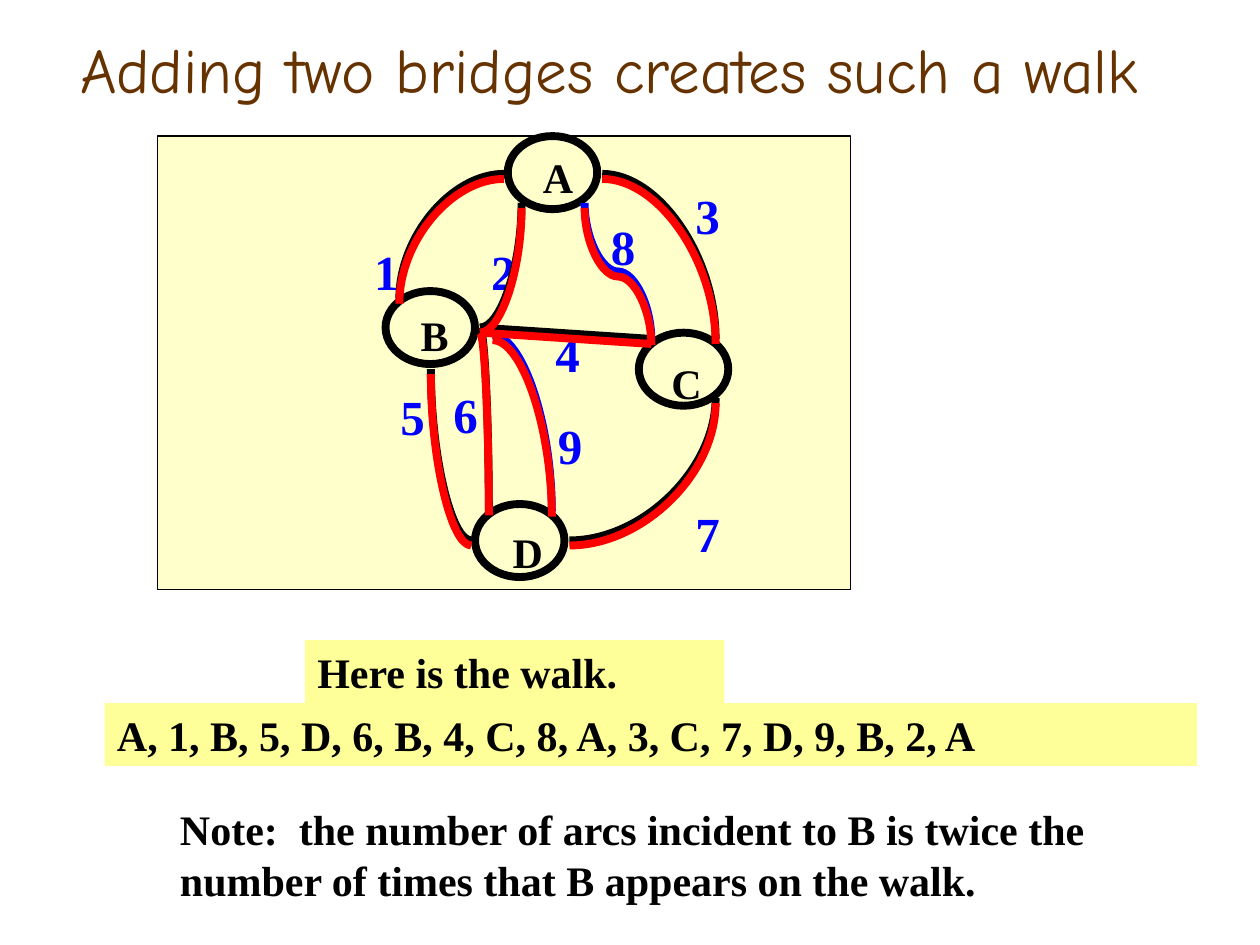
from dataclasses import dataclass
from typing import Optional

from lxml.etree import SubElement
from pptx import Presentation
from pptx.dml.color import RGBColor
from pptx.enum.shapes import MSO_CONNECTOR as CONN, MSO_SHAPE as SHAPE
from pptx.enum.text import MSO_ANCHOR as ANCHOR, MSO_AUTO_SIZE as FIT, PP_ALIGN as ALIGN
from pptx.oxml.ns import qn
from pptx.util import Inches, Pt

BLACK, BLUE, RED = "000000", "0000FF", "FF0000"
PALE, YELLOW, BROWN = "FFFFCC", "FFFF99", "663300"
RED_SHIFT = 0.04


@dataclass
class Label:
    text: str
    x: float
    y: float
    w: float = 0.49
    h: float = 0.57
    size: int = 28
    color: str = BLUE
    fill: Optional[str] = None


@dataclass
class Node:
    name: str
    x: float
    y: float
    text_x: float
    text_y: float


@dataclass
class Edge:
    x1: float
    y1: float
    x2: float
    y2: float
    kind: str = "corner"
    color: str = BLACK


BRIDGE_LABELS = [
    Label("1", 2.87, 1.87), Label("2", 3.8, 1.87), Label("4", 4.31, 2.52),
    Label("3", 5.42, 1.42), Label("7", 5.42, 3.95), Label("6", 3.5, 3),
    Label("5", 3.08, 3.02),
]
ADDED_LABELS = [Label("8", 4.75, 1.67), Label("9", 4.33, 3.25)]
NODES = [
    Node("A", 4.03, 1.08, 4.21, 1.15), Node("C", 5.07, 2.64, 5.23, 2.79),
    Node("D", 3.77, 4, 3.97, 4.13), Node("B", 3.06, 2.31, 3.24, 2.41),
]
EDGES = [
    Edge(4, 1.38, 3.17, 2.37),
    Edge(3.81, 2.6, 4.14, 1.61),
    Edge(3.81, 2.6, 3.88, 4.05),
    Edge(3.81, 2.6, 5.17, 2.69, "straight"),
    Edge(3.74, 4.29, 3.42, 2.93),
    Edge(4.52, 4.29, 5.68, 3.16),
    Edge(4.78, 1.38, 5.68, 2.69),
    Edge(4.64, 1.61, 5.17, 2.7, "wave", BLUE),
    Edge(3.91, 2.66, 4.38, 4.06, color=BLUE),
]
WALK = Label("A, 1, B, 5, D, 6, B, 4, C, 8, A, 3, C, 7, D, 9, B, 2, A",
             0.83, 5.58, 8.67, 0.5, 24, BLACK, YELLOW)
INTRO = Label("Here is the walk.", 2.42, 5.08, 3.33, 0.5, 24, BLACK, YELLOW)
NOTE = Label("Note:  the number of arcs incident to B is twice the "
             "number of times that B appears on the walk.",
             1.33, 6.33, 7.58, 0.9, 24, BLACK)


def rgb(color: str) -> RGBColor:
    return RGBColor.from_string(color)


def set_all(obj, values: dict) -> None:
    for name, value in values.items():
        setattr(obj, name, value)


def write(tf, text: str, color: str, font: dict):
    p = tf.paragraphs[0]
    r = p.add_run()
    r.text = text
    set_all(r.font, font)
    r.font.color.rgb = rgb(color)
    return p


def add_title(shapes, text: str) -> None:
    sp = shapes.add_textbox(Inches(0), Inches(0.08), Inches(9.67), Inches(0.92))
    tf = sp.text_frame
    set_all(tf, {"word_wrap": True, "vertical_anchor": ANCHOR.MIDDLE})
    p = write(tf, text, BROWN, {"name": "Comic Neue", "size": Pt(36)})
    p.alignment = ALIGN.CENTER


def add_label(shapes, label: Label) -> None:
    sp = shapes.add_textbox(Inches(label.x), Inches(label.y),
                            Inches(label.w), Inches(label.h))
    if label.fill:
        sp.fill.solid()
        sp.fill.fore_color.rgb = rgb(label.fill)
    tf = sp.text_frame
    set_all(tf, {"word_wrap": True, "auto_size": FIT.SHAPE_TO_FIT_TEXT})
    p = write(tf, label.text, label.color,
              {"name": "Times New Roman", "size": Pt(label.size), "bold": True})
    before = SubElement(p._p.get_or_add_pPr(), qn("a:spcBef"))
    SubElement(before, qn("a:spcPct")).set("val", "50000")


def add_outline(shapes, kind: SHAPE, x: float, y: float, w: float, h: float,
                width: float, fill: Optional[str] = None) -> None:
    sp = shapes.add_shape(kind, Inches(x), Inches(y), Inches(w), Inches(h))
    sp.shadow.inherit = False
    if fill:
        sp.fill.solid()
        sp.fill.fore_color.rgb = rgb(fill)
    else:
        sp.fill.background()
    sp.line.color.rgb = rgb(BLACK)
    sp.line.width = Pt(width)


def add_node(shapes, node: Node) -> None:
    add_label(shapes, Label(node.name, node.text_x, node.text_y, 0.66, 0.5, 24, BLACK))
    add_outline(shapes, SHAPE.OVAL, node.x, node.y, 0.71, 0.58, 4.5)


def add_edge(shapes, edge: Edge, color: str, shift: float = 0) -> None:
    x1, y1, x2, y2 = edge.x1, edge.y1 + shift, edge.x2, edge.y2 + shift
    if edge.kind == "wave":
        cx, cy = (x1 + x2) / 2, (y1 + y2) / 2
        dx, dy = (x2 - x1) / 2, (y2 - y1) / 2
        x1, y1, x2, y2 = cx + dy, cy - dx, cx - dy, cy + dx
    kind = CONN.STRAIGHT if edge.kind == "straight" else CONN.CURVE
    cn = shapes.add_connector(kind, Inches(x1), Inches(y1), Inches(x2), Inches(y2))
    cn.line.color.rgb = rgb(color)
    cn.line.width = Pt(4.5)
    sp_pr = cn._element.spPr
    SubElement(sp_pr, qn("a:effectLst"))
    if edge.kind == "corner":
        sp_pr.find(qn("a:prstGeom")).set("prst", "curvedConnector2")
    elif edge.kind == "wave":
        sp_pr.find(qn("a:xfrm")).set("rot", str(270 * 60000))


def main() -> None:
    prs = Presentation()
    set_all(prs, {"slide_width": Inches(10), "slide_height": Inches(7.5)})
    shapes = prs.slides.add_slide(prs.slide_layouts[6]).shapes

    add_title(shapes, "Adding two bridges creates such a walk")
    add_label(shapes, WALK)
    add_outline(shapes, SHAPE.RECTANGLE, 1.25, 1.08, 5.5, 3.6, 0.75, PALE)
    for label in BRIDGE_LABELS:
        add_label(shapes, label)
    for node in NODES:
        add_node(shapes, node)
    for edge in EDGES:
        add_edge(shapes, edge, edge.color)
    for label in ADDED_LABELS:
        add_label(shapes, label)
    for edge in EDGES:
        add_edge(shapes, edge, RED, RED_SHIFT)
    for label in (INTRO, NOTE):
        add_label(shapes, label)
    prs.save("out.pptx")


if __name__ == "__main__":
    main()
